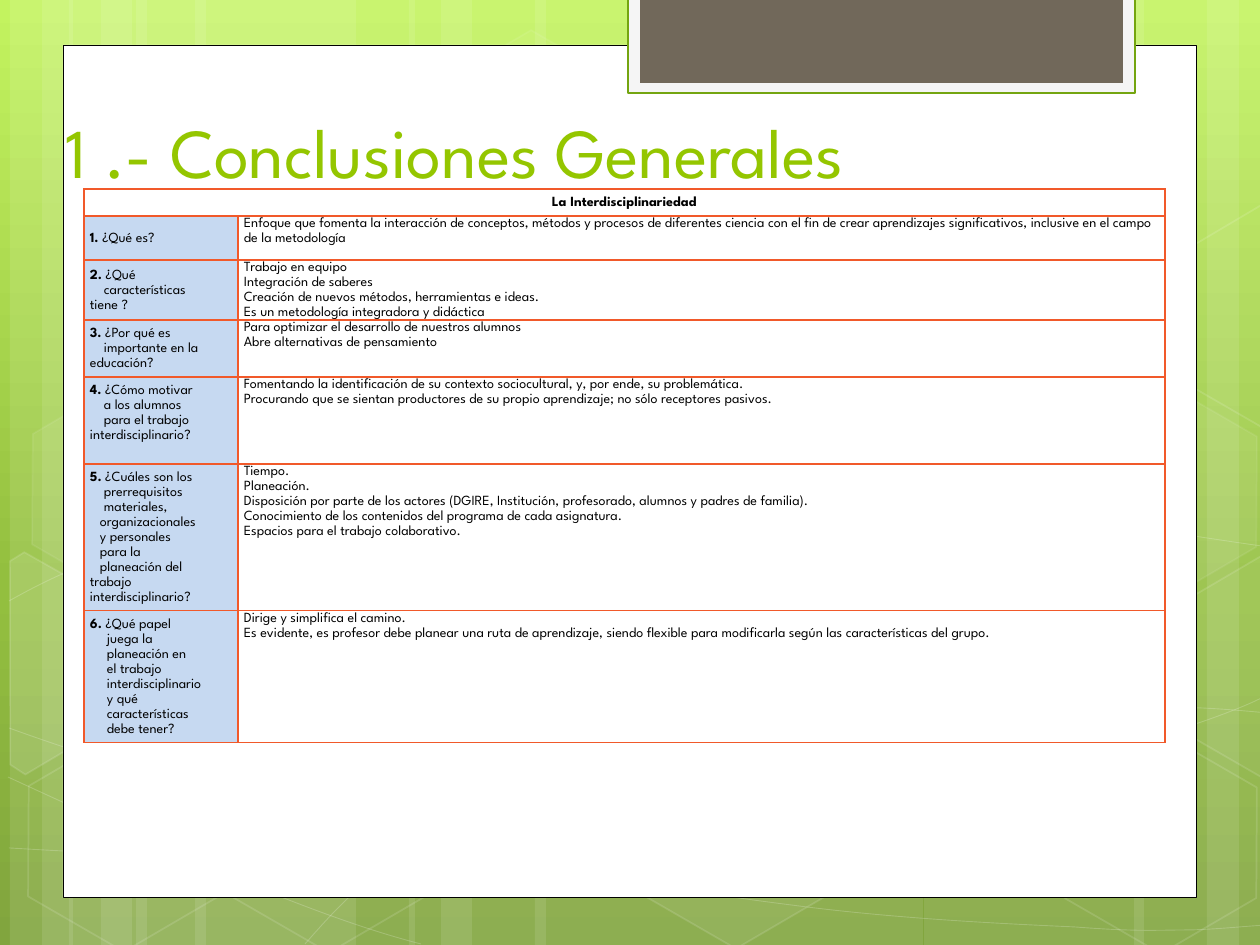
import copy
import math
import lxml.etree
import pptx
import pptx.util
import pptx.dml.color
import pptx.enum.shapes
import pptx.enum.text
import pptx.oxml
import pptx.oxml.ns

PX = 914400 / 126
THEME = {
    "font": "League Spartan", "title_size": 40, "table_size": 8,
    "sky": [(0, "C3F35F"), (0.62, "93BF3F"), (1, "81A53E")],
    "white": "FFFFFF", "black": "000000", "title": "94C600",
    "frame": "F5F5F5", "frame_line": "74A510", "tab": "71685A",
    "question": "C6D9F1", "border": "F1592A",
}
MSO = pptx.enum.shapes.MSO_SHAPE
ALIGN = pptx.enum.text.PP_ALIGN
ANCHOR = pptx.enum.text.MSO_ANCHOR
RGB = pptx.dml.color.RGBColor.from_string
QN = pptx.oxml.ns.qn


def paint(sp, fill=None, line=None, width=1, fill_alpha=100, line_alpha=100):
    sp.shadow.inherit = False
    for part, color, alpha in ((sp.fill, fill, fill_alpha), (sp.line.fill, line, line_alpha)):
        if color is None:
            part.background()
            continue
        part.solid()
        part.fore_color.rgb = RGB(color)
        if alpha < 100:
            owner = sp._element.spPr if part is sp.fill else sp.line._ln
            clr = owner.find(QN("a:solidFill"))[0]
            lxml.etree.SubElement(clr, QN("a:alpha"), val=str(alpha * 1000))
    if line:
        sp.line.width = pptx.util.Pt(width)


def write(tf, lines, lead="", size=THEME["table_size"], color=THEME["black"],
          bold=False, align=ALIGN.LEFT, spacing=1.15):
    tf.word_wrap = True
    for i, (indent, text) in enumerate(lines):
        p = tf.paragraphs[0] if i == 0 else tf.add_paragraph()
        p.alignment, p.line_spacing = align, spacing
        if indent:
            p._p.get_or_add_pPr().set("marL", str(round(indent * PX)))
        runs = [(lead, True), (text, bold)] if lead and i == 0 else [(text, bold)]
        for content, strong in runs:
            r = p.add_run()
            r.text = content
            r.font.name, r.font.size = THEME["font"], pptx.util.Pt(size)
            r.font.bold, r.font.color.rgb = strong, RGB(color)


prs = pptx.Presentation()
prs.slide_width, prs.slide_height = round(1260 * PX), round(945 * PX)
s = prs.slides.add_slide(prs.slide_layouts[5])

sky = s.background.fill
sky.gradient()
sky.gradient_angle = 270
first = sky.gradient_stops[0]._gs
first.addnext(copy.deepcopy(first))
for stop, (position, color) in zip(sky.gradient_stops, THEME["sky"]):
    stop.position = position
    stop.color.rgb = RGB(color)

bars = [(136, 220), (10, 63), (42, 105), (195, 220), (69, 63), (101, 105),
        (924, 220), (1207, 63), (1134, 105), (535, 388), (409, 63), (441, 105)]
for x, w in bars:
    sp = s.shapes.add_shape(MSO.RECTANGLE, round(x * PX), 0, round(w * PX), prs.slide_height)
    paint(sp, THEME["white"], fill_alpha=10)

curves = [
    [(9, 848), (77, 852), (145, 856), (239, 854), (334, 853), (451, 851), (577, 838),
     (703, 825), (882, 801), (998, 777), (1113, 753), (1231, 716), (1269, 694)],
    [(9, 601), (45, 581), (82, 562), (152, 543), (224, 524), (326, 496), (437, 488),
     (549, 479), (685, 478), (824, 488), (963, 498), (1193, 537), (1269, 547)],
    [(8, 777), (160, 847), (311, 916), (421, 944)],
    [(9, 728), (48, 742), (88, 756), (161, 776), (234, 795), (344, 827), (450, 848),
     (554, 869), (687, 892), (791, 905), (896, 919), (1008, 924), (1075, 927),
     (1140, 932), (1158, 930), (1191, 930), (1223, 929), (1246, 926), (1269, 925)],
    [(305, 944), (328, 918), (350, 893), (381, 871), (411, 848), (454, 823), (489, 805),
     (524, 787), (546, 780), (592, 767), (638, 755), (722, 737), (766, 728),
     (811, 720), (818, 719), (857, 717), (896, 713), (958, 709), (1000, 708),
     (1045, 707), (1116, 708), (1116, 708), (1144, 708), (1172, 708), (1201, 708),
     (1223, 709), (1245, 711), (1256, 712), (1263, 713), (1267, 712), (1268, 713)],
]
for curve in curves:
    outline = s.shapes.build_freeform(*curve[0], scale=PX)
    outline.add_line_segments(curve[1:], close=False)
    sp = outline.convert_to_shape()
    segments = list(sp._element.iter(QN("a:lnTo")))
    for k in range(0, len(segments), 3):
        bezier = pptx.oxml.parse_xml(f'<a:cubicBezTo {pptx.oxml.ns.nsdecls("a")}/>')
        segments[k].addprevious(bezier)
        for segment in segments[k:k + 3]:
            bezier.append(segment[0])
            segment.getparent().remove(segment)
    paint(sp, line=THEME["white"], width=0.5, line_alpha=20)

hexagons = [(421, 45, 4, 8), (626, 742, 6, 12), (14, 745, 0, 12), (18, 393, 7, 8),
            (219, 746, 0, 12), (949, 571, 10, 12), (1051, 747, 0, 12), (1051, 396, 7, 8)]
for x, y, fill_alpha, line_alpha in hexagons:
    sp = s.shapes.add_shape(MSO.HEXAGON, *(round(v * PX) for v in (x, y, 220, 192)))
    sp.adjustments[0] = 0.285
    sp.rotation = 30
    paint(sp, THEME["white"] if fill_alpha else None, THEME["white"],
          fill_alpha=fill_alpha, line_alpha=line_alpha)

cut_hexagons = [
    (10, (45, 674), [(10, 561), (24, 552), (121, 607), (120, 718), (25, 774), (10, 765)]),
    (4, (1241, 655), [(1167, 611), (1261, 556), (1271, 562), (1271, 772), (1262, 777), (1167, 722)]),
    (0, (1241, 304), [(1167, 261), (1261, 205), (1272, 212), (1271, 422), (1262, 427), (1167, 372)]),
]
cos, sin = math.cos(math.radians(30)), math.sin(math.radians(30))
for fill_alpha, (cx, cy), corners in cut_hexagons:
    upright = [(cx + (x - cx) * cos + (y - cy) * sin, cy - (x - cx) * sin + (y - cy) * cos)
               for x, y in corners]
    outline = s.shapes.build_freeform(*upright[0], scale=PX)
    outline.add_line_segments(upright[1:])
    sp = outline.convert_to_shape()
    sp.rotation = 30
    paint(sp, THEME["white"] if fill_alpha else None, THEME["white"],
          fill_alpha=fill_alpha, line_alpha=12)

panels = [((63, 45, 1134, 853), "white", THEME["black"], 0.5),
          ((628, -3, 507, 96), "frame", THEME["frame_line"], 1.25),
          ((640, -3, 483, 86), "tab", None, 1)]
for box, fill, line, width in panels:
    sp = s.shapes.add_shape(MSO.RECTANGLE, *(round(v * PX) for v in box))
    paint(sp, THEME[fill], line, width)

title = s.shapes.title
title.left, title.top, title.width, title.height = (round(v * PX) for v in (53, 42, 968, 157))
s.shapes._spTree.append(title._element)
title.text_frame.auto_size = pptx.enum.text.MSO_AUTO_SIZE.NONE
title.text_frame.vertical_anchor = ANCHOR.BOTTOM
write(title.text_frame, [(0, "1 .- Conclusiones Generales")], size=THEME["title_size"],
      color=THEME["title"], spacing=1)

topics = [
    ([(0, " ¿Qué es?")],
     ["Enfoque que fomenta la interacción de conceptos, métodos y procesos de diferentes ciencia con el fin de crear aprendizajes significativos, inclusive en el campo de la metodología"]),
    ([(0, " ¿Qué"), (14, "características"), (0, "tiene ?")],
     ["Trabajo en equipo", "Integración de saberes",
      "Creación de nuevos métodos, herramientas e ideas.", "Es un metodología integradora y didáctica"]),
    ([(0, " ¿Por qué es"), (14, "importante en la"), (0, "educación?")],
     ["Para optimizar el desarrollo de nuestros alumnos", "Abre alternativas de pensamiento"]),
    ([(0, " ¿Cómo motivar"), (14, "a los alumnos"), (14, "para el trabajo"), (0, "interdisciplinario?")],
     ["Fomentando la identificación de su contexto sociocultural, y, por ende, su problemática.",
      "Procurando que se sientan productores de su propio aprendizaje; no sólo receptores pasivos."]),
    ([(0, " ¿Cuáles son los"), (14, "prerrequisitos"), (14, "materiales,"), (10, "organizacionales"),
      (10, "y personales"), (10, "para la"), (10, "planeación del"), (0, "trabajo interdisciplinario?")],
     ["Tiempo.", "Planeación.",
      "Disposición por parte de los actores (DGIRE, Institución, profesorado, alumnos y padres de familia).",
      "Conocimiento de los contenidos del programa de cada asignatura.",
      "Espacios para el trabajo colaborativo."]),
    ([(0, " ¿Qué papel"), (17, "juega la"), (17, "planeación en"), (17, "el trabajo"),
      (17, "interdisciplinario"), (17, "y qué"), (17, "características"), (17, "debe tener?")],
     ["Dirige y simplifica el camino.",
      "Es evidente, es profesor debe planear una ruta de aprendizaje, siendo flexible para modificarla según las características del grupo."]),
]
widths, heights = [154, 927], [27, 44, 60, 56, 87, 146, 132]
box = (84, 189, sum(widths), sum(heights))
table = s.shapes.add_table(len(heights), len(widths), *(round(v * PX) for v in box)).table
table.first_row = table.horz_banding = False
for column, w in zip(table.columns, widths):
    column.width = round(w * PX)
for row, h in zip(table.rows, heights):
    row.height = round(h * PX)
for cell in table.iter_cells():
    cell.margin_left = cell.margin_right = cell.margin_top = cell.margin_bottom = round(6 * PX)
    for side in "LRTB":
        cell._tc.get_or_add_tcPr().append(pptx.oxml.parse_xml(
            f'<a:ln{side} {pptx.oxml.ns.nsdecls("a")} w="12700"><a:solidFill>'
            f'<a:srgbClr val="{THEME["border"]}"/></a:solidFill><a:prstDash val="solid"/></a:ln{side}>'))
    cell.fill.background()

table.cell(0, 0).merge(table.cell(0, 1))
write(table.cell(0, 0).text_frame, [(0, "La Interdisciplinariedad")], bold=True, align=ALIGN.CENTER)
for n, (question, answers) in enumerate(topics, 1):
    left, right = table.cell(n, 0), table.cell(n, 1)
    left.fill.solid()
    left.fill.fore_color.rgb = RGB(THEME["question"])
    left.vertical_anchor = ANCHOR.MIDDLE
    write(left.text_frame, question, lead=f"{n}.")
    right.margin_top = right.margin_bottom = 0
    write(right.text_frame, [(0, answer) for answer in answers])
table.cell(4, 0).margin_bottom = round(21 * PX)

prs.save("out.pptx")
